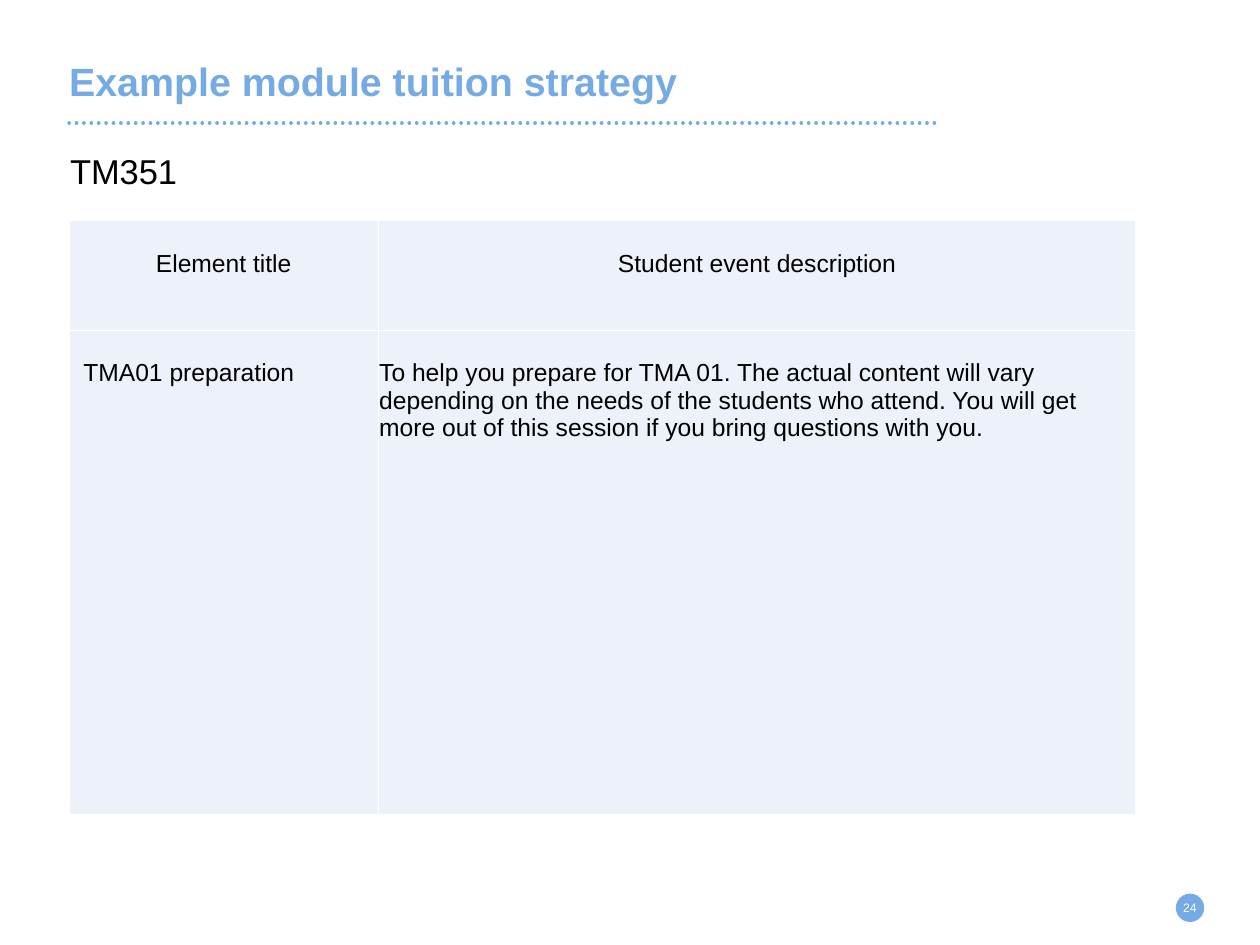
from lxml.etree import SubElement
from pptx import Presentation
from pptx.dml.color import RGBColor
from pptx.enum.dml import MSO_LINE
from pptx.enum.shapes import MSO_CONNECTOR, MSO_SHAPE
from pptx.enum.text import MSO_ANCHOR as Anchor, MSO_AUTO_SIZE as AutoSize, PP_ALIGN as Align
from pptx.oxml.ns import qn
from pptx.util import Inches, Pt

BLUE, PALE, WHITE, BLACK = "75AAE5", "ECF1FA", "FFFFFF", "000000"
LEFT = 0.78
COLUMN_WIDTHS = (3.49, 8.55)
ROW_HEIGHTS = (1.24, 5.47)
ROWS = (
    ("Element title", "Student event description"),
    ("TMA01 preparation",
     "To help you prepare for TMA 01. The actual content will vary depending on "
     "the needs of the students who attend. You will get more out of this session "
     "if you bring questions with you."),
)


def color(value):
    return RGBColor.from_string(value)


def inches(box):
    return [Inches(length) for length in box]


def write(frame, text, size, fill=BLACK, bold=False, align=Align.LEFT, spacing=None):
    para = frame.paragraphs[0]
    para.alignment = align
    para.space_before = Pt(0)
    if spacing:
        para.line_spacing = Pt(spacing)
    span = para.add_run()
    span.text = text
    span.font.name = "Arial"
    span.font.size = Pt(size)
    span.font.bold = bold
    span.font.color.rgb = color(fill)


def clear_insets(frame, anchor):
    frame.margin_left = frame.margin_top = frame.margin_right = frame.margin_bottom = 0
    frame.word_wrap = True
    frame.auto_size = AutoSize.NONE
    frame.vertical_anchor = anchor


def fill_placeholder(shape, box, text, size, **style):
    shape.left, shape.top, shape.width, shape.height = inches(box)
    clear_insets(shape.text_frame, Anchor.TOP)
    write(shape.text_frame, text, size, **style)


def add_dotted_rule(page, left, top, width):
    rule = page.shapes.add_connector(
        MSO_CONNECTOR.STRAIGHT, *inches((left, top, left + width, top)))
    rule.line.color.rgb = color(BLUE)
    rule.line.width = Pt(3)
    rule.line.dash_style = MSO_LINE.ROUND_DOT
    properties = rule._element.spPr
    properties.find(qn("a:ln")).set("cap", "rnd")
    SubElement(properties, qn("a:effectLst"))


def add_borders(cell):
    properties = cell._tc.get_or_add_tcPr()
    for side in ("a:lnL", "a:lnR", "a:lnT", "a:lnB"):
        line = SubElement(properties, qn(side), w=str(Pt(1)))
        solid = SubElement(line, qn("a:solidFill"))
        SubElement(solid, qn("a:srgbClr"), val=WHITE)


def add_events_table(page, left, top):
    box = (left, top, sum(COLUMN_WIDTHS), sum(ROW_HEIGHTS))
    table = page.shapes.add_table(len(ROWS), len(COLUMN_WIDTHS), *inches(box)).table
    for column, width in zip(table.columns, COLUMN_WIDTHS):
        column.width = Inches(width)
    for row, height, texts in zip(table.rows, ROW_HEIGHTS, ROWS):
        row.height = Inches(height)
        header = texts is ROWS[0]
        for index, (cell, text) in enumerate(zip(row.cells, texts)):
            add_borders(cell)
            cell.fill.solid()
            cell.fill.fore_color.rgb = color(PALE)
            indented = index == 0 and not header
            cell.margin_left = Inches(0.16 if indented else 0.01)
            cell.margin_right = Inches(0.01)
            cell.margin_top = Inches(0.33)
            cell.margin_bottom = 0
            write(cell.text_frame, text, 20, align=Align.CENTER if header else Align.LEFT)


def add_page_number(page, box, number):
    badge = page.shapes.add_shape(MSO_SHAPE.OVAL, *inches(box))
    badge.shadow.inherit = False
    badge.fill.solid()
    badge.fill.fore_color.rgb = color(BLUE)
    badge.line.fill.background()
    clear_insets(badge.text_frame, Anchor.MIDDLE)
    badge.text_frame.word_wrap = False
    write(badge.text_frame, number, 10, fill=WHITE, align=Align.CENTER)


def build_strategy_slide(deck):
    page = deck.slides.add_slide(deck.slide_layouts[0])
    title, subtitle = page.placeholders
    fill_placeholder(title, (LEFT, 0.46, 10.4, 0.9), "Example module tuition strategy",
                     32, fill=BLUE, bold=True, spacing=52)
    fill_placeholder(subtitle, (LEFT + 0.01, 1.69, 10.4, 0.47), "TM351", 28)
    add_dotted_rule(page, LEFT, 1.39, 9.84)
    add_events_table(page, LEFT, 2.49)
    add_page_number(page, (13.27, 10.09, 0.32, 0.32), "24")


def main():
    deck = Presentation()
    deck.slide_width, deck.slide_height = inches((14.22, 10.67))
    build_strategy_slide(deck)
    deck.save("out.pptx")


if __name__ == "__main__":
    main()
